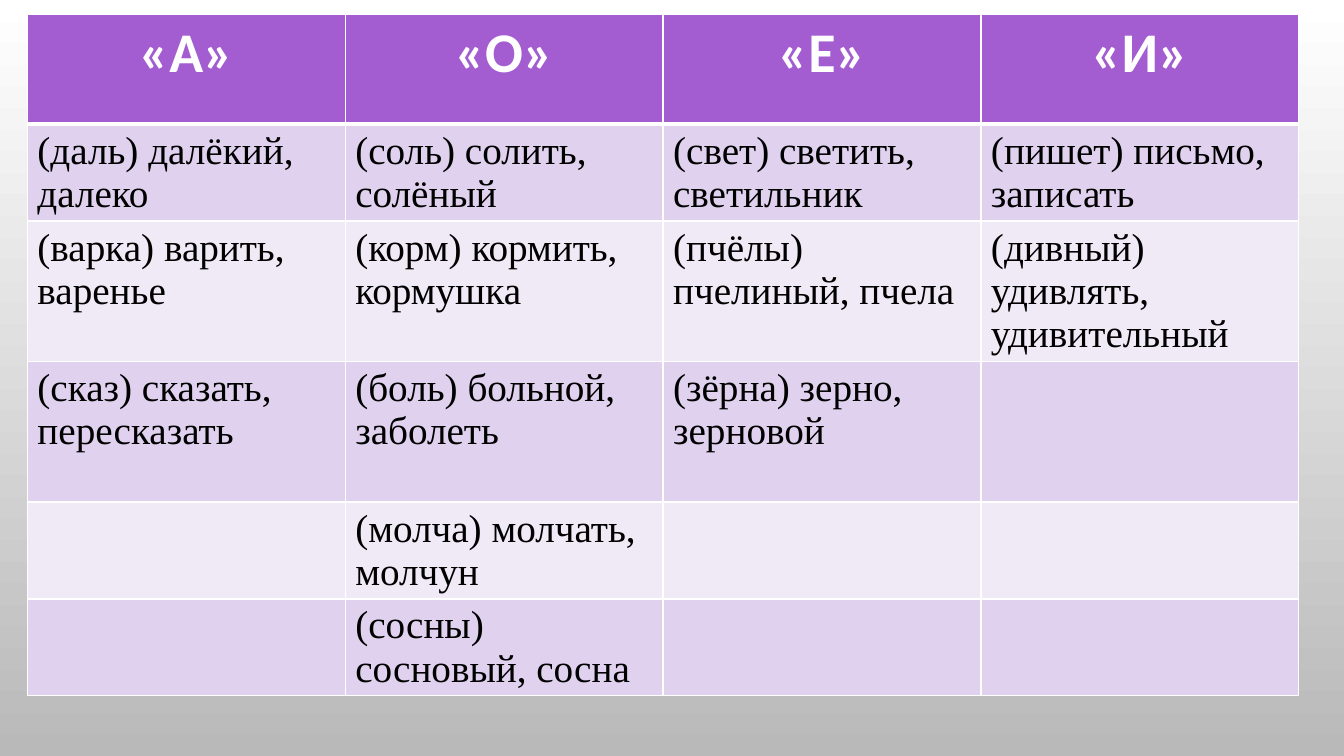
from dataclasses import dataclass

from lxml.etree import SubElement
from pptx import Presentation
from pptx.dml.color import RGBColor as Rgb
from pptx.enum.text import PP_ALIGN as Align
from pptx.oxml.ns import qn
from pptx.slide import Slide
from pptx.table import Table, _Cell as Cell
from pptx.util import Cm, Pt


@dataclass(frozen=True)
class Theme:
    header_fill: str = "A35DD1"
    bands: tuple[str, str] = ("E0D2EE", "F0EAF7")
    header_ink: str = "FFFFFF"
    body_ink: str = "000000"
    rule: str = "FFFFFF"
    backdrop: tuple[str, str] = ("FFFFFF", "B9B9B9")
    header_font: str = "Calibri"
    body_font: str = "Times New Roman"
    header_size: int = 40
    body_size: int = 28
    rule_width: int = 1
    header_rule_width: int = 3


@dataclass(frozen=True)
class VowelRow:
    height: float
    words: tuple[str, ...]


THEME = Theme()
LEFT, TOP, COLUMN_WIDTH = 0.69, 0.36, 8.01

HEADER = VowelRow(2.77, ("«А»", "«О»", "«Е»", "«И»"))
WORD_ROWS = (
    VowelRow(2.43, ("(даль) далёкий, далеко", "(соль) солить, солёный",
                    "(свет) светить, светильник", "(пишет) письмо, записать")),
    VowelRow(3.54, ("(варка) варить, варенье", "(корм) кормить, кормушка",
                    "(пчёлы) пчелиный, пчела", "(дивный) удивлять, удивительный")),
    VowelRow(3.54, ("(сказ) сказать, пересказать", "(боль) больной, заболеть",
                    "(зёрна) зерно, зерновой", "")),
    VowelRow(2.43, ("", "(молча) молчать, молчун", "", "")),
    VowelRow(2.43, ("", "(сосны) сосновый, сосна", "", "")),
)


def paint_backdrop(slide: Slide) -> None:
    fill = slide.background.fill
    fill.gradient()
    fill.gradient_angle = 270
    for stop, color in zip(fill.gradient_stops, THEME.backdrop):
        stop.color.rgb = Rgb.from_string(color)


def rule_cell(cell: Cell, top: int, bottom: int) -> None:
    """Draw the four borders; call before filling, as the XML order requires."""
    properties = cell._tc.get_or_add_tcPr()
    widths = {"a:lnL": THEME.rule_width, "a:lnR": THEME.rule_width,
              "a:lnT": top, "a:lnB": bottom}
    for side, width in widths.items():
        line = SubElement(properties, qn(side), w=str(Pt(width)))
        SubElement(SubElement(line, qn("a:solidFill")), qn("a:srgbClr"), val=THEME.rule)


def write_cell(cell: Cell, words: str, is_header: bool) -> None:
    cell.text_frame.text = words
    paragraph = cell.text_frame.paragraphs[0]
    paragraph.alignment = Align.CENTER if is_header else Align.LEFT
    for run in paragraph.runs:
        run.font.name = THEME.header_font if is_header else THEME.body_font
        run.font.size = Pt(THEME.header_size if is_header else THEME.body_size)
        run.font.bold = is_header
        run.font.color.rgb = Rgb.from_string(
            THEME.header_ink if is_header else THEME.body_ink)


def fill_row(table: Table, index: int, row: VowelRow) -> None:
    is_header = index == 0
    table.rows[index].height = Cm(row.height)
    top = THEME.header_rule_width if index == 1 else THEME.rule_width
    bottom = THEME.header_rule_width if is_header else THEME.rule_width
    color = THEME.header_fill if is_header else THEME.bands[(index - 1) % 2]
    for column, words in enumerate(row.words):
        cell = table.cell(index, column)
        rule_cell(cell, top, bottom)
        cell.fill.solid()
        cell.fill.fore_color.rgb = Rgb.from_string(color)
        write_cell(cell, words, is_header)


def add_vowel_table(slide: Slide) -> None:
    rows = (HEADER, *WORD_ROWS)
    columns = len(HEADER.words)
    table = slide.shapes.add_table(
        len(rows), columns, Cm(LEFT), Cm(TOP), Cm(COLUMN_WIDTH * columns),
        Cm(sum(row.height for row in rows))).table
    for index, row in enumerate(rows):
        fill_row(table, index, row)


def main() -> None:
    presentation = Presentation()
    presentation.slide_width, presentation.slide_height = Cm(33.87), Cm(19.05)
    slide = presentation.slides.add_slide(presentation.slide_layouts[6])
    paint_backdrop(slide)
    add_vowel_table(slide)
    presentation.save("out.pptx")


if __name__ == "__main__":
    main()
